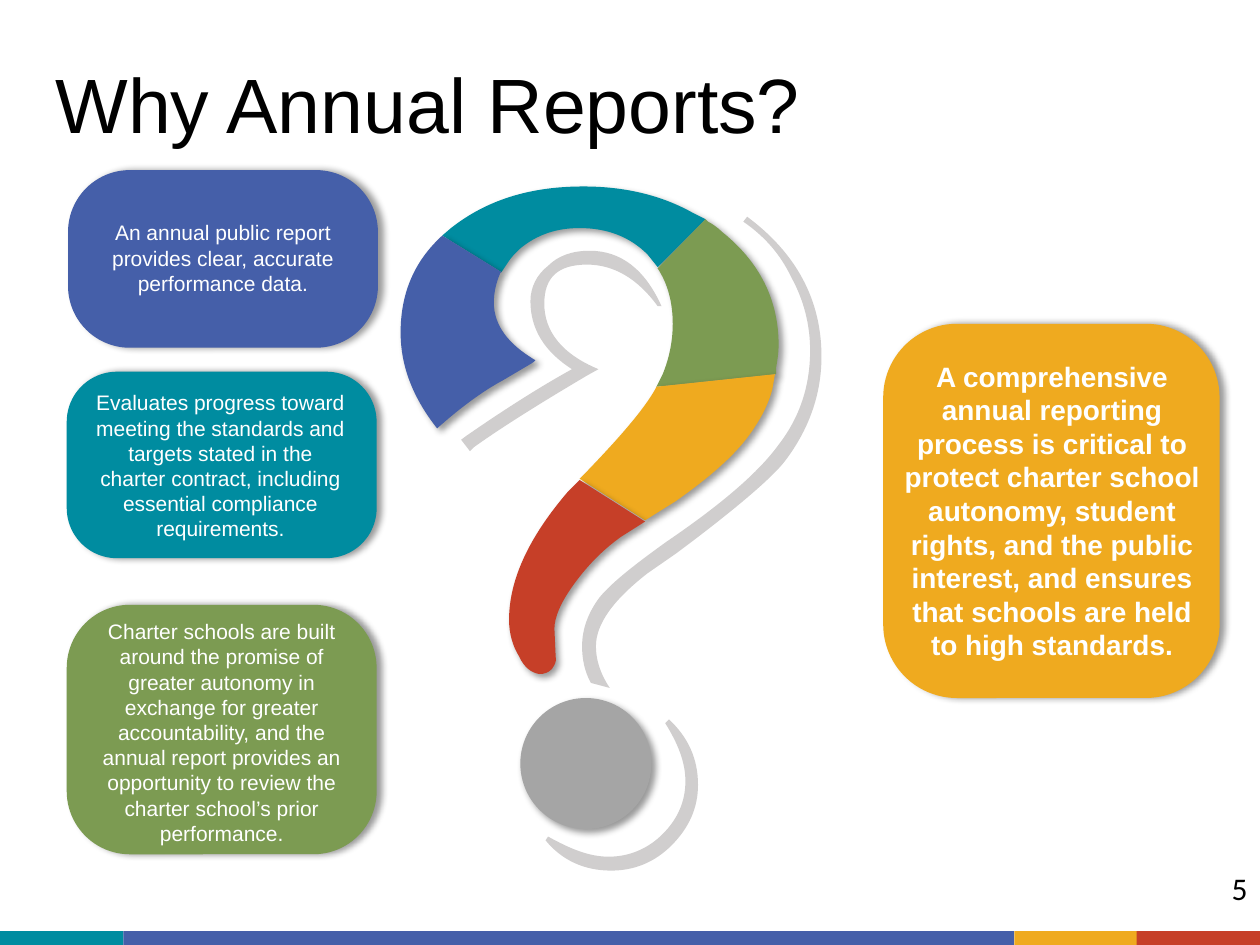
from lxml import etree
from pptx import Presentation
from pptx.dml.color import RGBColor
from pptx.enum.shapes import MSO_SHAPE
from pptx.enum.text import MSO_ANCHOR, MSO_AUTO_SIZE, PP_ALIGN
from pptx.oxml.ns import qn
from pptx.util import Inches, Pt

BLUE = RGBColor(0x45, 0x5F, 0xA9)
TEAL = RGBColor(0x00, 0x8C, 0xA0)
GREEN = RGBColor(0x7C, 0x9B, 0x52)
AMBER = RGBColor(0xEF, 0xAA, 0x1F)
RED = RGBColor(0xC6, 0x3F, 0x28)
GRAY = RGBColor(0xA5, 0xA5, 0xA5)
PALE = RGBColor(0xD0, 0xCE, 0xCE)
BLACK = RGBColor(0, 0, 0)
WHITE = RGBColor(0xFF, 0xFF, 0xFF)

# Bottom stripe: left, width, colour
STRIPE = [(0, 0.98, TEAL), (0.98, 7.07, BLUE), (8.05, 0.98, AMBER), (9.02, 0.98, RED)]

# Outlines in inches: a start point, then lines (2 numbers) or cubic curves (6 numbers)
SWOOSHES = [
    [(5.93, 1.72), (6.32, 2.01, 6.52, 2.38, 6.52, 2.83), (6.52, 3.13, 6.42, 3.41, 6.23, 3.66),
     (6.13, 3.79, 5.84, 4.04, 5.37, 4.39), (5.14, 4.55), (4.87, 4.76, 4.73, 4.95, 4.73, 5.13),
     (4.73, 5.23, 4.76, 5.34, 4.84, 5.46), (4.69, 5.42), (4.64, 5.33, 4.62, 5.23, 4.62, 5.13),
     (4.62, 4.99, 4.67, 4.86, 4.76, 4.74), (4.86, 4.62, 5.04, 4.48, 5.29, 4.3),
     (5.73, 4, 6.02, 3.75, 6.18, 3.53), (6.35, 3.31, 6.43, 3.06, 6.43, 2.78),
     (6.43, 2.58, 6.38, 2.38, 6.28, 2.2), (6.19, 2.01, 6.06, 1.87, 5.9, 1.76)],
    [(4.68, 1.99), (4.93, 1.99, 5.12, 2.14, 5.25, 2.43), (5.22, 2.43),
     (5.06, 2.21, 4.87, 2.1, 4.66, 2.1), (4.43, 2.1, 4.32, 2.2, 4.32, 2.41),
     (4.32, 2.63, 4.46, 2.81, 4.75, 2.93), (4.66, 2.98), (4.27, 3.21, 3.97, 3.4, 3.76, 3.55),
     (3.73, 3.58), (3.66, 3.49), (3.7, 3.46), (4.06, 3.21, 4.34, 3.04, 4.54, 2.93),
     (4.32, 2.79, 4.21, 2.61, 4.21, 2.39), (4.21, 2.28, 4.26, 2.18, 4.35, 2.11),
     (4.43, 2.03, 4.54, 1.99, 4.68, 1.99)],
    [(5.31, 5.71), (5.46, 5.85, 5.54, 6.02, 5.54, 6.23), (5.54, 6.41, 5.47, 6.57, 5.33, 6.71),
     (5.2, 6.84, 5.04, 6.91, 4.85, 6.91), (4.64, 6.91, 4.46, 6.83, 4.33, 6.67), (4.35, 6.64),
     (4.53, 6.74, 4.68, 6.8, 4.83, 6.8), (4.99, 6.8, 5.14, 6.74, 5.26, 6.62),
     (5.38, 6.5, 5.44, 6.36, 5.44, 6.2), (5.44, 6.05, 5.38, 5.9, 5.28, 5.74)],
]
SEGMENTS = [
    (TEAL, [(4.63, 1.48), (4.96, 1.48, 5.25, 1.55, 5.5, 1.69), (5.6, 1.74), (5.22, 2.12),
            (5.14, 2.02), (5, 1.88, 4.82, 1.81, 4.6, 1.81), (4.42, 1.81, 4.26, 1.86, 4.12, 1.98),
            (4.09, 2.01, 4.06, 2.04, 4.04, 2.07), (3.98, 2.16), (3.51, 1.87), (3.58, 1.81),
            (3.86, 1.59, 4.2, 1.48, 4.63, 1.48)]),
    (GREEN, [(5.6, 1.74), (5.62, 1.76), (5.66, 1.78, 5.7, 1.81, 5.73, 1.84),
             (6.03, 2.08, 6.18, 2.38, 6.18, 2.74), (6.18, 2.8, 6.17, 2.86, 6.16, 2.92),
             (6.16, 2.97), (5.21, 3.07), (5.26, 2.97), (5.31, 2.85, 5.34, 2.71, 5.34, 2.57),
             (5.34, 2.4, 5.3, 2.25, 5.22, 2.13)]),
    (BLUE, [(3.51, 1.87), (3.98, 2.16), (3.97, 2.17), (3.94, 2.24, 3.92, 2.32, 3.92, 2.4),
            (3.92, 2.58, 4.03, 2.73, 4.25, 2.86), (4.23, 2.88, 4.21, 2.89, 4.21, 2.89),
            (3.99, 3.02), (3.84, 3.1, 3.66, 3.23, 3.47, 3.4), (3.28, 3.16, 3.18, 2.91, 3.18, 2.64),
            (3.18, 2.34, 3.28, 2.09, 3.49, 1.89)]),
    (AMBER, [(6.15, 2.97), (6.13, 3.09), (6.1, 3.2, 6.05, 3.3, 5.99, 3.39),
             (5.87, 3.58, 5.66, 3.77, 5.36, 3.98), (5.12, 4.13), (4.6, 3.8), (4.66, 3.74),
             (4.92, 3.47, 5.11, 3.25, 5.2, 3.09), (5.21, 3.07)]),
    (RED, [(4.6, 3.81), (5.12, 4.14), (4.93, 4.26), (4.79, 4.36, 4.67, 4.48, 4.56, 4.63),
           (4.45, 4.78, 4.4, 4.9, 4.4, 4.99), (4.41, 5.21), (4.42, 5.25, 4.4, 5.28, 4.38, 5.31),
           (4.35, 5.34, 4.32, 5.35, 4.28, 5.35), (4.22, 5.34, 4.16, 5.3, 4.12, 5.21),
           (4.07, 5.13, 4.04, 5.03, 4.04, 4.92), (4.04, 4.6, 4.2, 4.26, 4.51, 3.9)]),
]

# Card box, corner radius, colour, text box, size, bold, text
CARDS = [
    ((0.54, 1.35, 2.46, 1.41), 0.348, BLUE, (0.6, 1.69, 2.34, 0.71), 12, False,
     "An annual public report provides clear, accurate performance data."),
    ((0.53, 2.95, 2.46, 1.48), 0.269, TEAL, (0.66, 3.04, 2.18, 1.31), 12, False,
     "Evaluates progress toward meeting the standards and targets stated in the charter "
     "contract, including essential compliance requirements."),
    ((0.53, 4.8, 2.46, 1.98), 0.253, GREEN, (0.67, 4.85, 2.18, 1.92), 12, False,
     "Charter schools are built around the promise of greater autonomy in exchange for "
     "greater accountability, and the annual report provides an opportunity to review the "
     "charter school’s prior performance."),
    ((7.01, 2.57, 2.67, 2.97), 0.219, AMBER, (7.06, 2.79, 2.58, 2.52), 16, True,
     "A comprehensive annual reporting process is critical to protect charter school "
     "autonomy, student rights, and the public interest, and ensures that schools are held "
     "to high standards."),
]


class SlideBuilder:
    def __init__(self, slide, font="Arial"):
        self.s = slide
        self.font = font

    def paint(self, sp, color, shadow_angle=None):
        """Fill without outline; add a soft shadow when an angle in degrees is given."""
        sp.fill.solid()
        sp.fill.fore_color.rgb = color
        sp.line.fill.background()
        sp.shadow.inherit = False
        if shadow_angle is not None:
            effects = sp._element.spPr.find(qn("a:effectLst"))
            shadow = etree.SubElement(effects, qn("a:outerShdw"), blurRad=str(Pt(4)),
                                      dist=str(Pt(3)), dir=str(shadow_angle * 60000),
                                      algn="tl", rotWithShape="0")
            clr = etree.SubElement(shadow, qn("a:srgbClr"), val="000000")
            etree.SubElement(clr, qn("a:alpha"), val="40000")

    def shape(self, kind, box, color, shadow_angle=None, radius=None):
        sp = self.s.shapes.add_shape(kind, *map(Inches, box))
        if radius is not None:
            sp.adjustments[0] = radius
        self.paint(sp, color, shadow_angle)

    def outline(self, segments, color, shadow_angle=None):
        """Draw a closed freeform, turning six-number segments into cubic curves."""
        segments = [[round(v * 100) for v in seg] for seg in segments]
        ends = [seg[-2:] for seg in segments]
        left, top = (min(axis) for axis in zip(*ends))
        fb = self.s.shapes.build_freeform(*ends[0], scale=Inches(0.01))
        fb.add_line_segments(ends[1:], close=True)
        sp = fb.convert_to_shape()
        steps = list(sp._element.iter(qn("a:lnTo")))
        for step, seg in zip(steps, segments[1:]):
            if len(seg) == 6:
                step.tag = qn("a:cubicBezTo")
                for i in (0, 2):
                    pt = etree.Element(qn("a:pt"), x=str(seg[i] - left), y=str(seg[i + 1] - top))
                    step.insert(i // 2, pt)
        self.paint(sp, color, shadow_angle)

    def style(self, p, size, color, align, bold=False, font=None):
        p.alignment = align
        for r in p.runs:
            r.font.name = font or self.font
            r.font.size = Pt(size)
            r.font.bold = bold
            r.font.color.rgb = color

    def insets(self, tf, size):
        tf.margin_left = tf.margin_right = tf.margin_top = tf.margin_bottom = Inches(size)

    def title(self, text, box):
        sp = self.s.shapes.title
        sp.left, sp.top, sp.width, sp.height = map(Inches, box)
        tf = sp.text_frame
        tf.text = text
        tf.auto_size = MSO_AUTO_SIZE.NONE
        tf.vertical_anchor = MSO_ANCHOR.BOTTOM
        self.insets(tf, 0.1)
        p = tf.paragraphs[0]
        p.line_spacing = 0.9
        self.style(p, 44, BLACK, PP_ALIGN.LEFT)

    def text(self, text, box, size, color, align, bold=False, font=None):
        tf = self.s.shapes.add_textbox(*map(Inches, box)).text_frame
        tf.text = text
        tf.word_wrap = True
        self.style(tf.paragraphs[0], size, color, align, bold, font)
        return tf

    def card(self, box, radius, color, text_box, size, bold, text):
        self.shape(MSO_SHAPE.ROUNDED_RECTANGLE, box, color, 0, radius)
        tf = self.text(text, text_box, size, WHITE, PP_ALIGN.CENTER, bold)
        tf.vertical_anchor = MSO_ANCHOR.MIDDLE
        tf.auto_size = MSO_AUTO_SIZE.SHAPE_TO_FIT_TEXT

    def page_number(self, text, box):
        tf = self.text(text, box, 18, BLACK, PP_ALIGN.RIGHT, font="Calibri")
        self.insets(tf, 0.1)
        tf.paragraphs[0].space_after = Pt(6)


def main():
    prs = Presentation()
    prs.slide_width, prs.slide_height = Inches(10), Inches(7.5)
    b = SlideBuilder(prs.slides.add_slide(prs.slide_layouts[5]))
    for left, width, color in STRIPE:
        b.shape(MSO_SHAPE.RECTANGLE, (left, 7.39, width, 0.11), color)
    b.title("Why Annual Reports?", (0.34, 0.46, 8.62, 0.83))
    for swoosh in SWOOSHES:
        b.outline(swoosh, PALE)
    b.shape(MSO_SHAPE.OVAL, (4.13, 5.54, 1.04, 1.04), GRAY, 45)
    for color, segment in SEGMENTS:
        b.outline(segment, color, 45)
    for card in CARDS:
        b.card(*card)
    b.page_number("5", (9.4, 6.8, 0.6, 0.57))
    prs.save("out.pptx")


if __name__ == "__main__":
    main()
